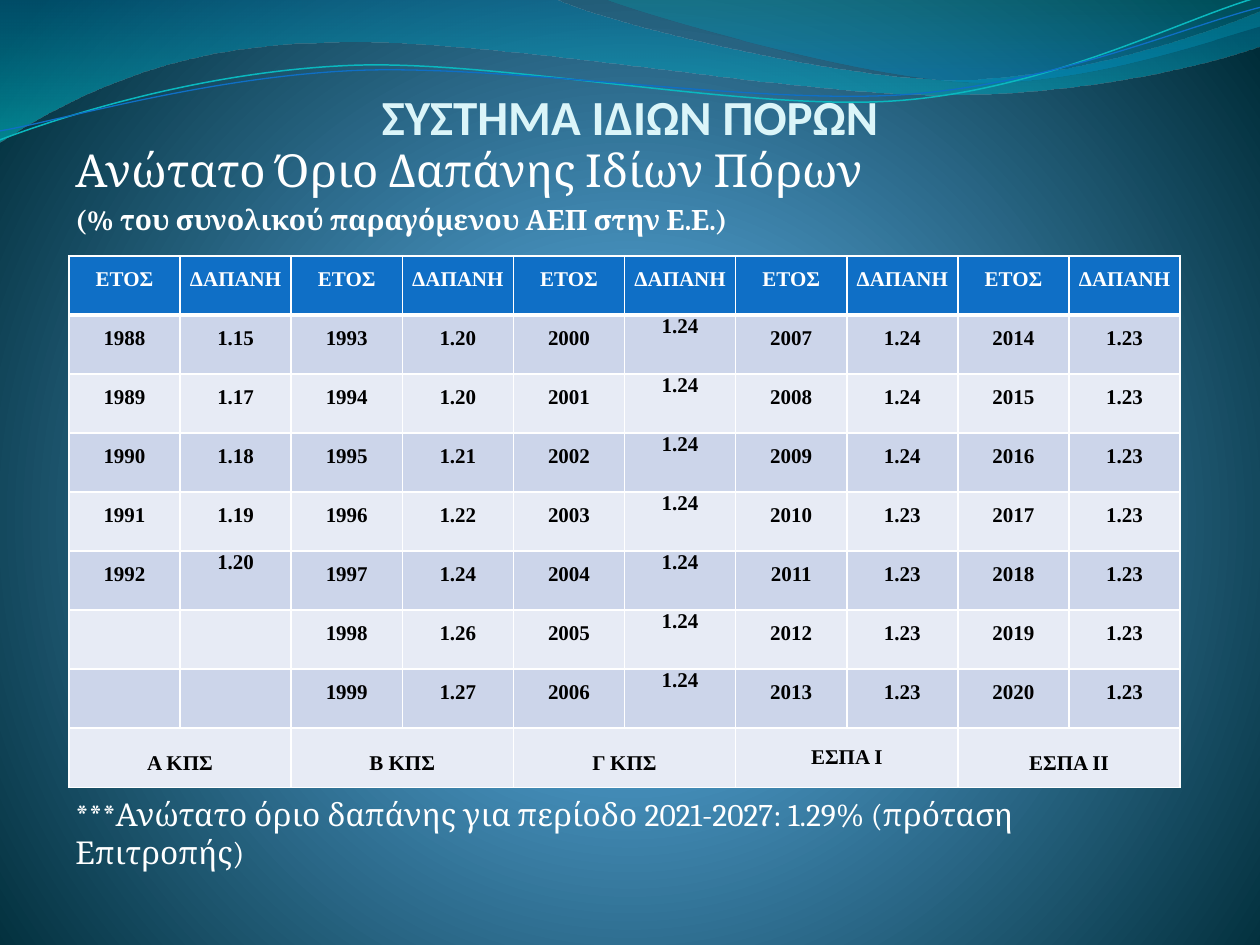
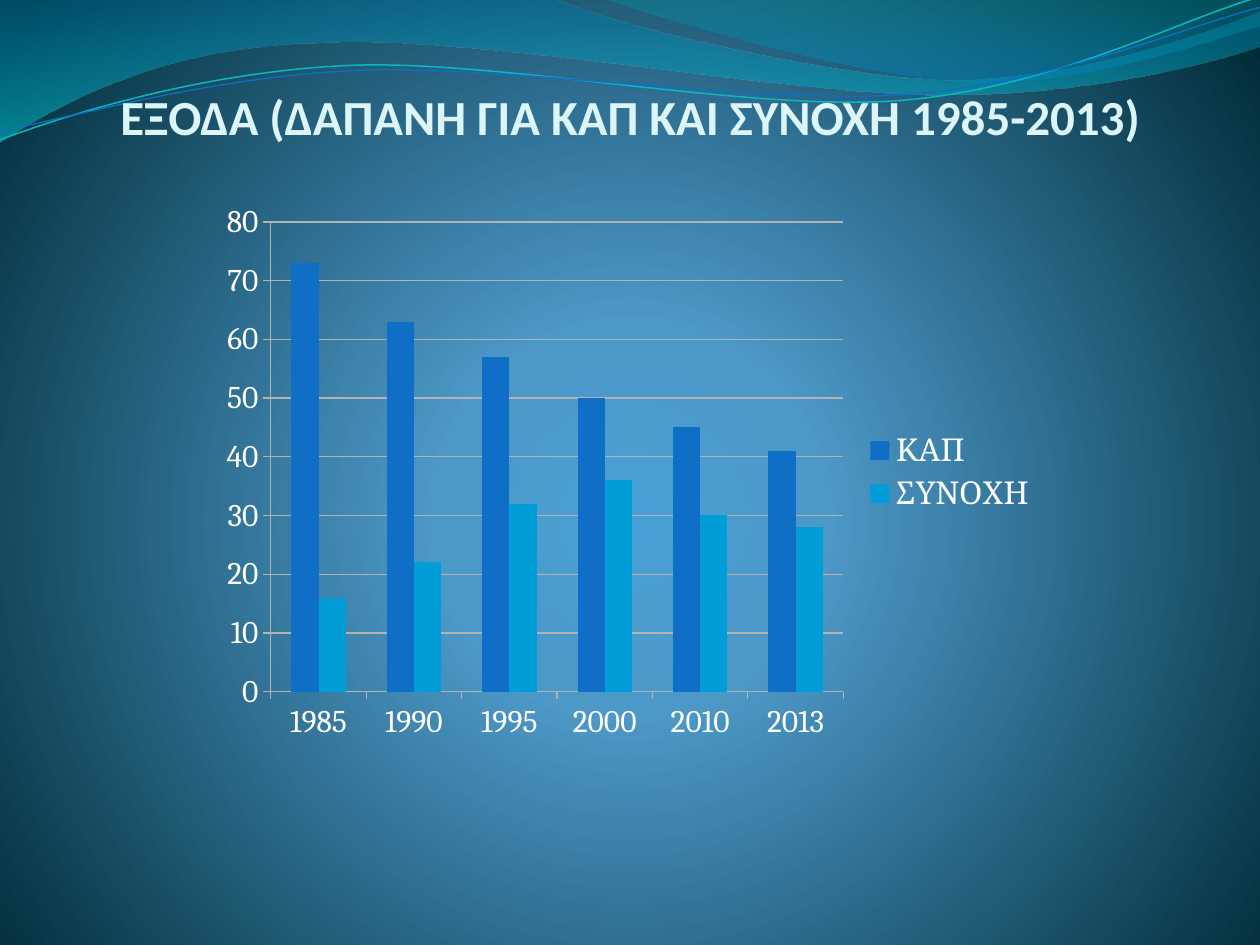
from dataclasses import dataclass

from lxml import etree
from pptx import Presentation
from pptx import util as u
from pptx.chart import data as cd
from pptx.dml.color import RGBColor
from pptx.enum import chart as ch, text as tx
from pptx.oxml import ns, parse_xml
from pptx.util import Cm, Pt


@dataclass(frozen=True)
class Theme:
    white: str = "FFFFFF"
    black: str = "000000"
    title: str = "DBF5F9"
    blue: str = "0F6FC6"
    sky: str = "009DD9"
    grid: str = "B3B3B3"
    bands: tuple = ("E7EBF5", "CCD5EA")
    head: str = "Calibri"
    body: str = "Cambria"
    cell: str = "Times New Roman"
    big: int = 28
    lead: int = 26
    text: int = 18
    note: int = 16
    small: int = 12


T = Theme()

TITLES = ["ΣΥΣΤΗΜΑ ΙΔΙΩΝ ΠΟΡΩΝ", "ΕΞΟΔΑ (ΔΑΠΑΝΗ ΓΙΑ ΚΑΠ ΚΑΙ ΣΥΝΟΧΗ 1985-2013)"]
LEAD = [("Ανώτατο Όριο Δαπάνης Ιδίων Πόρων", T.lead, False),
        ("(% του συνολικού παραγόμενου ΑΕΠ στην Ε.Ε.)", T.note, True)]
NOTE = [("***Ανώτατο όριο δαπάνης για περίοδο 2021-2027: 1.29% (πρόταση Επιτροπής)",
         T.text, False)]

HEADS = ("ΕΤΟΣ", "ΔΑΠΑΝΗ")
# Period, first year, spending ceiling of each year
PERIODS = [
    ("A ΚΠΣ", 1988, (1.15, 1.17, 1.18, 1.19, 1.20)),
    ("Β ΚΠΣ", 1993, (1.20, 1.20, 1.21, 1.22, 1.24, 1.26, 1.27)),
    ("Γ ΚΠΣ", 2000, (1.24,) * 7),
    ("ΕΣΠΑ Ι", 2007, (1.24,) * 3 + (1.23,) * 4),
    ("ΕΣΠΑ ΙΙ", 2014, (1.23,) * 7),
]
# Single-spaced cells as (row, column); the others have 1.5 lines
TIGHT = {(row, 5) for row in range(1, 8)} | {(5, 1), (8, 6)}

YEARS = ["1985", "1990", "1995", "2000", "2010", "2013"]
SERIES = [("ΚΑΠ", (73, 63, 57, 50, 45, 41), T.blue),
          ("ΣΥΝΟΧΗ", (16, 22, 32, 36, 30, 28), T.sky)]

# Gradient stops: position, colour, opacity in percent
GLOW = [(0, "4AA0D6", 100), (25, "4C98C7", 100), (100, "002C38", 100)]
ROUND = ('<a:path path="circle"><a:fillToRect l="10000" t="110000" '
         'r="10000" b="100000"/></a:path>')
DOWN = '<a:lin ang="5400000" scaled="0"/>'

# Steps in cm: a pair is a straight line, six numbers are a Bezier curve
BANDS = [
    ([(0, "0074A1", 45), (100, "00C6CF", 55)],
     [(0, -.03), (11.18, -.03),
      (12.09, .43, 16.87, 1.6, 19.25, 1.6), (21.67, 1.6, 24.33, .66, 25.4, .23),
      (25.43, .91),
      (24.97, 1.12, 22.1, 1.93, 18.95, 1.91), (15.8, 1.91, 9.7, .71, 6.53, .86),
      (3.28, .89, 1.17, 2.11, -.03, 2.87), (0, -.03)]),
    ([(0, "00A1A9", 30), (80, "008BBF", 45)],
     [(12.17, -.03),
      (12.93, .28, 17.32, 1.57, 19.53, 1.65), (21.74, 1.75, 24.41, .81, 25.4, .53),
      (25.4, 0), (12.17, -.03)]),
]
LINES = [
    ("0AB8BF", .85,
     [(0, 2.82), (1.22, 2.36, 4.01, 1.45, 7.04, 1.32),
      (10.03, 1.19, 15.06, 2.26, 18.11, 2.03), (21.16, 1.8, 23.83, .38, 25.35, -.05)]),
    (T.blue, .75,
     [(0, 2.64), (1.19, 2.44, 4.17, 1.55, 7.19, 1.42),
      (10.24, 1.3, 15.16, 2.11, 18.21, 1.91), (21.23, 1.7, 23.9, .53, 25.4, .15)]),
]


def rgb(code):
    return RGBColor.from_string(code)


def style(font, size, face, color, bold=False):
    font.size, font.name, font.bold = Pt(size), face, bold
    font.color.rgb = rgb(color)


def blend(props, stops, tail):
    """Swap the empty fill of a properties element for a gradient."""
    marks = "".join(
        f'<a:gs pos="{pos * 1000}"><a:srgbClr val="{code}">'
        f'<a:alpha val="{alpha * 1000}"/></a:srgbClr></a:gs>'
        for pos, code, alpha in stops)
    fill = parse_xml(f'<a:gradFill {ns.nsdecls("a")} rotWithShape="1">'
                     f'<a:gsLst>{marks}</a:gsLst>{tail}</a:gradFill>')
    props.replace(props.find(ns.qn("a:noFill")), fill)


def bend(shape, steps):
    """Join the three lines through each curve's points into one Bezier."""
    lines = iter(list(shape.element.iter(ns.qn("a:lnTo"))))
    for step in steps[1:]:
        group = [next(lines) for _ in range(len(step) // 2)]
        if len(group) == 3:
            curve = parse_xml(f'<a:cubicBezTo {ns.nsdecls("a")}/>')
            group[0].addprevious(curve)
            for line in group:
                curve.append(line[0])
                line.getparent().remove(line)


def wave(slide, steps, close):
    first, *rest = [(Cm(step[i]), Cm(step[i + 1]))
                    for step in steps for i in range(0, len(step), 2)]
    pen = slide.shapes.build_freeform(*first)
    pen.add_line_segments(rest, close=close)
    shape = pen.convert_to_shape()
    bend(shape, steps)
    shape.shadow.inherit = False
    shape.fill.background()
    return shape


def dress(prs, layout, slide):
    """Give the master its glow and the layout its waves, drawn via a slide."""
    back = prs.slide_master.background.fill
    back.background()
    blend(prs.slide_master.element.cSld.bg.bgPr, GLOW, ROUND)
    waves = []
    for stops, steps in BANDS:
        shape = wave(slide, steps, True)
        shape.line.fill.background()
        blend(shape.element.spPr, stops, DOWN)
        waves.append(shape)
    for color, width, steps in LINES:
        shape = wave(slide, steps, False)
        shape.line.color.rgb = rgb(color)
        shape.line.width = Pt(width)
        waves.append(shape)
    for i, shape in enumerate(waves):
        shape.element.nvSpPr.cNvPr.set("id", str(50 + i))
        layout.shapes.element.insert(2 + i, shape.element)


def head(slide, words):
    title = slide.shapes.title
    title.left, title.top, title.width, title.height = Cm(1.27), Cm(0), Cm(22.86), Cm(2.93)
    frame = title.text_frame
    frame.text = words
    frame.vertical_anchor = tx.MSO_ANCHOR.BOTTOM
    frame.margin_left = frame.margin_right = frame.margin_bottom = 0
    para = frame.paragraphs[0]
    para.alignment = tx.PP_ALIGN.CENTER
    style(para.runs[0].font, T.big, T.head, T.title, True)


def prose(slide, top, height, paras):
    box = slide.shapes.add_textbox(Cm(1.27), Cm(top), Cm(22.6), Cm(height))
    frame = box.text_frame
    frame.word_wrap = True
    for i, (words, size, bold) in enumerate(paras):
        para = frame.add_paragraph() if i else frame.paragraphs[0]
        para.text = words
        para.space_before = Pt(.23 * size if i else 0)
        style(para.runs[0].font, size, T.body, T.white, bold)


def edge(cell, **widths):
    props = cell._tc.get_or_add_tcPr()
    for side in "LRTB":
        line = etree.SubElement(props, ns.qn(f"a:ln{side}"), w=str(Pt(widths.get(side, 1))))
        fill = etree.SubElement(line, ns.qn("a:solidFill"))
        etree.SubElement(fill, ns.qn("a:srgbClr"), val=T.white)


def grid():
    """Lay the periods side by side as rows of text."""
    rows = [list(HEADS) * len(PERIODS)]
    for i in range(max(len(vals) for _, _, vals in PERIODS)):
        row = []
        for _, year, vals in PERIODS:
            row += [str(year + i), f"{vals[i]:.2f}"] if i < len(vals) else ["", ""]
        rows.append(row)
    return rows + [[word for name, _, _ in PERIODS for word in (name, "")]]


def ceilings(slide):
    rows = grid()
    last = len(rows) - 1
    table = slide.shapes.add_table(len(rows), len(rows[0]), Cm(1.39), Cm(5.16),
                                   Cm(22.4), Cm(10.71)).table
    table.horz_banding = False
    for col in table.columns:
        col.width = Cm(2.24)
    for r, row in enumerate(rows):
        table.rows[r].height = Cm(1.19)
        for c, words in enumerate(row):
            cell = table.cell(r, c)
            edge(cell, T=3 if r == 1 else 1, B=3 if r == 0 else 1)
            cell.fill.solid()
            cell.fill.fore_color.rgb = rgb(T.bands[r % 2] if r else T.blue)
            cell.margin_left = cell.margin_right = Cm(.18)
            cell.margin_top = cell.margin_bottom = 0
            if r == last:
                cell.vertical_anchor = tx.MSO_ANCHOR.MIDDLE
            if not words:
                continue
            cell.text_frame.text = words
            para = cell.text_frame.paragraphs[0]
            para.alignment = tx.PP_ALIGN.CENTER
            para.line_spacing = 1.0 if (r, c) in TIGHT else 1.5
            style(para.runs[0].font, T.small, T.cell, T.black if r else T.white, True)
    for c in range(0, len(rows[0]), 2):
        table.cell(last, c).merge(table.cell(last, c + 1))


def spending(slide):
    data = cd.CategoryChartData(number_format="0")
    data.categories = YEARS
    for name, vals, _ in SERIES:
        data.add_series(name, vals)
    chart = slide.shapes.add_chart(ch.XL_CHART_TYPE.COLUMN_CLUSTERED, Cm(4.23), Cm(3.88),
                                   Cm(16.93), Cm(11.28), data).chart
    style(chart.font, T.text, T.body, T.white)
    chart.has_title = False
    chart.has_legend = True
    chart.legend.position = ch.XL_LEGEND_POSITION.RIGHT
    chart.legend.include_in_layout = False
    plot = chart.plots[0]
    plot.gap_width = 150
    plot.vary_by_categories = False
    for bars, (_, _, color) in zip(plot.series, SERIES):
        bars.format.fill.solid()
        bars.format.fill.fore_color.rgb = rgb(color)
    for axis in (chart.category_axis, chart.value_axis):
        axis.major_tick_mark = ch.XL_TICK_MARK.OUTSIDE
        axis.format.line.color.rgb = rgb(T.grid)
    value = chart.value_axis
    value.minimum_scale, value.maximum_scale, value.major_unit = 0, 80, 10
    value.has_major_gridlines = True
    value.major_gridlines.format.line.color.rgb = rgb(T.grid)


def main():
    prs = Presentation()
    prs.slide_width, prs.slide_height = u.Cm(25.4), u.Cm(19.05)
    layout = prs.slide_layouts[5]
    first, second = slides = [prs.slides.add_slide(layout) for _ in TITLES]
    dress(prs, layout, first)
    for slide, words in zip(slides, TITLES):
        head(slide, words)
    prose(first, 2.73, 2.3, LEAD)
    ceilings(first)
    prose(first, 15.91, 1.8, NOTE)
    spending(second)
    prs.save("out.pptx")


if __name__ == "__main__":
    main()
